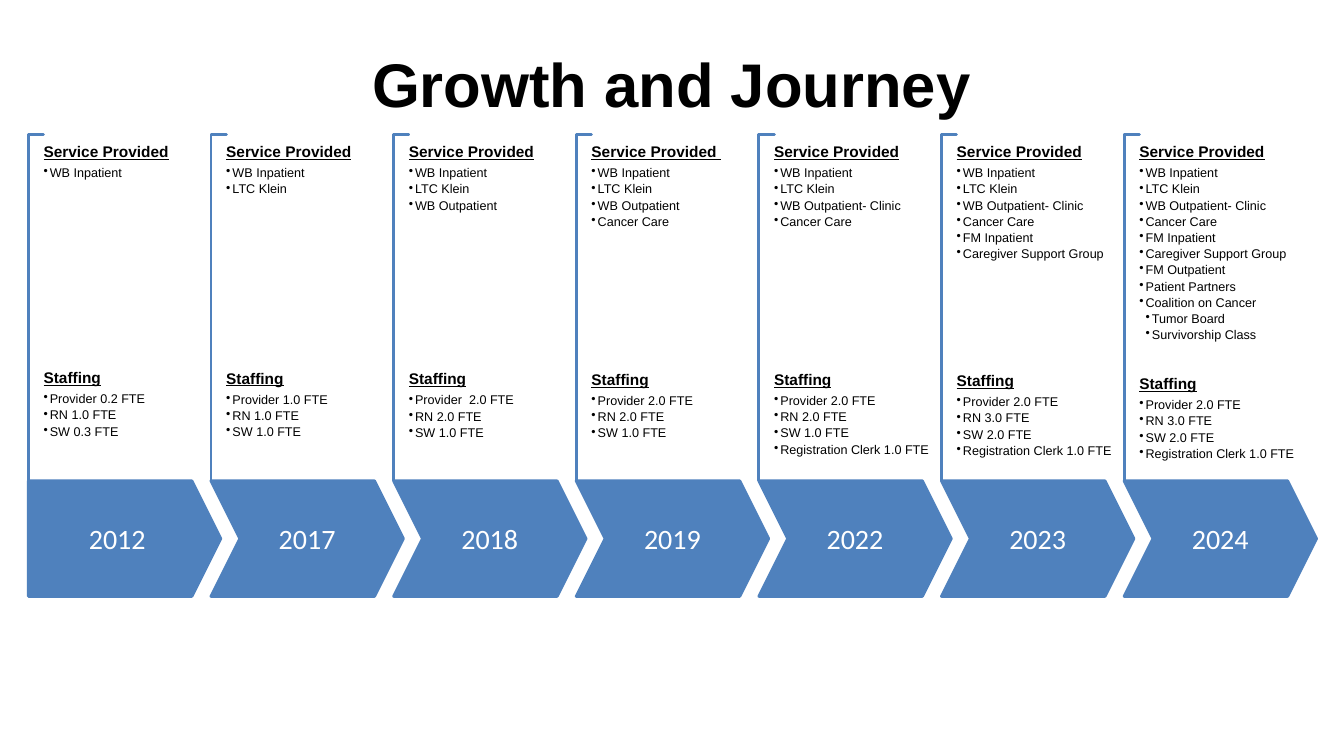
from dataclasses import dataclass
from lxml import etree
from pptx import Presentation
from pptx.dml.color import RGBColor
from pptx.enum.shapes import MSO_SHAPE
from pptx.enum.text import MSO_ANCHOR, PP_ALIGN
from pptx.oxml.ns import qn
from pptx.util import Pt

CORNER, CHEVRON, PENTAGON = MSO_SHAPE.CORNER, MSO_SHAPE.CHEVRON, MSO_SHAPE.PENTAGON
CENTER, MIDDLE, TOP = PP_ALIGN.CENTER, MSO_ANCHOR.MIDDLE, MSO_ANCHOR.TOP


@dataclass(frozen=True)
class Theme:
    blue: RGBColor = RGBColor(0x4F, 0x81, 0xBD)
    white: RGBColor = RGBColor(0xFF, 0xFF, 0xFF)
    black: RGBColor = RGBColor(0, 0, 0)
    text_font: str = "Arial"
    year_font: str = "Calibri"
    title: int = 44
    year: int = 20
    heading: int = 11
    item: int = 9


T = Theme()
LINE_SPACING = 0.9
HEADING_AFTER = 4.3
ITEM_AFTER = 1.82
ITEM_PITCH = 11.14  # one item line with the space after it
SERVICE_ROWS = 13   # item lines reserved above the staffing heading
INDENT = 4.5

# year, services, services one level down, staffing
YEARS = [
    ("2012", ["WB Inpatient"], [],
     ["Provider 0.2 FTE", "RN 1.0 FTE", "SW 0.3 FTE"]),
    ("2017", ["WB Inpatient", "LTC Klein"], [],
     ["Provider 1.0 FTE", "RN 1.0 FTE", "SW 1.0 FTE"]),
    ("2018", ["WB Inpatient", "LTC Klein", "WB Outpatient"], [],
     ["Provider  2.0 FTE", "RN 2.0 FTE", "SW 1.0 FTE"]),
    ("2019", ["WB Inpatient", "LTC Klein", "WB Outpatient", "Cancer Care"], [],
     ["Provider 2.0 FTE", "RN 2.0 FTE", "SW 1.0 FTE"]),
    ("2022", ["WB Inpatient", "LTC Klein", "WB Outpatient- Clinic", "Cancer Care"], [],
     ["Provider 2.0 FTE", "RN 2.0 FTE", "SW 1.0 FTE", "Registration Clerk 1.0 FTE"]),
    ("2023", ["WB Inpatient", "LTC Klein", "WB Outpatient- Clinic", "Cancer Care",
              "FM Inpatient", "Caregiver Support Group"], [],
     ["Provider 2.0 FTE", "RN 3.0 FTE", "SW 2.0 FTE", "Registration Clerk 1.0 FTE"]),
    ("2024", ["WB Inpatient", "LTC Klein", "WB Outpatient- Clinic", "Cancer Care",
              "FM Inpatient", "Caregiver Support Group", "FM Outpatient",
              "Patient Partners", "Coalition on Cancer"],
     ["Tumor Board", "Survivorship Class"],
     ["Provider 2.0 FTE", "RN 3.0 FTE", "SW 2.0 FTE", "Registration Clerk 1.0 FTE"]),
]


def add_run(p, text, size, color, font, bold=False, underline=False):
    r = p.add_run()
    r.text = text
    f = r.font
    f.size, f.name, f.bold, f.underline = Pt(size), font, bold, underline
    f.color.rgb = color


def add_shape(s, kind, x, y, w, h, fill):
    sp = s.shapes.add_shape(kind, Pt(x), Pt(y), Pt(w), Pt(h))
    sp.shadow.inherit = False
    sp.fill.solid()
    sp.fill.fore_color.rgb = fill
    sp.line.color.rgb = T.blue
    sp.line.width = Pt(2)
    return sp


def set_frame(tf, anchor):
    tf.word_wrap = True
    tf.vertical_anchor = anchor
    tf.margin_left = tf.margin_right = tf.margin_top = tf.margin_bottom = 0


def add_title(s, x, y, w, h, text):
    sp = s.shapes.add_textbox(Pt(x), Pt(y), Pt(w), Pt(h))
    set_frame(sp.text_frame, MIDDLE)
    p = sp.text_frame.paragraphs[0]
    p.alignment = CENTER
    add_run(p, text, T.title, T.black, T.text_font, bold=True)


def add_bracket(s, x, y, w, h):
    """Top-left corner line: an L shape turned by a quarter about its centre."""
    sp = add_shape(s, CORNER, x + (w - h) / 2, y + (h - w) / 2, h, w, T.white)
    sp.rotation = 90
    sp.adjustments[0] = sp.adjustments[1] = 0.01


def add_arrow(s, kind, x, y, w, h, year):
    sp = add_shape(s, kind, x, y, w, h, T.blue)
    sp.adjustments[0] = 0.25
    set_frame(sp.text_frame, MIDDLE)
    p = sp.text_frame.paragraphs[0]
    p.alignment = CENTER
    add_run(p, year, T.year, T.white, T.year_font)


def write_heading(p, text, before=0):
    p.line_spacing = LINE_SPACING
    p.space_before, p.space_after = Pt(before), Pt(HEADING_AFTER)
    add_run(p, text, T.heading, T.black, T.text_font, bold=True, underline=True)


def write_items(tf, items, level=1):
    for item in items:
        p = tf.add_paragraph()
        p.level = level
        p.line_spacing = LINE_SPACING
        p.space_before, p.space_after = Pt(0), Pt(ITEM_AFTER)
        pPr = p._p.get_or_add_pPr()
        pPr.set("marL", str(int(Pt(INDENT * level))))
        pPr.set("indent", str(-int(Pt(INDENT))))
        etree.SubElement(pPr, qn("a:buChar")).set("char", "•")
        add_run(p, item, T.item, T.black, T.text_font)


def add_details(s, x, y, w, h, heading, services, subservices, staffing):
    tf = s.shapes.add_textbox(Pt(x), Pt(y), Pt(w), Pt(h)).text_frame
    set_frame(tf, TOP)
    write_heading(tf.paragraphs[0], heading)
    write_items(tf, services)
    write_items(tf, subservices, level=2)
    free_rows = SERVICE_ROWS - len(services) - len(subservices)
    write_heading(tf.add_paragraph(), "Staffing", before=round(free_rows * ITEM_PITCH, 2))
    write_items(tf, staffing)


def add_timeline(s, x, y, pitch):
    for i, (year, services, subservices, staffing) in enumerate(YEARS):
        left = x + i * pitch
        # The 2019 heading ends in an underlined no-break space
        heading = "Service Provided" + (" " if year == "2019" else "")
        add_bracket(s, left, y, 11, 247)
        add_arrow(s, CHEVRON if i else PENTAGON, left, y + 247.5, 137.5, 82.5, year)
        add_details(s, left + 10.9, y + 7, 111.6, 225, heading,
                    services, subservices, staffing)


def main():
    prs = Presentation()
    prs.slide_width, prs.slide_height = Pt(960), Pt(540)
    s = prs.slides.add_slide(prs.slide_layouts[6])
    add_timeline(s, 20.2, 96, 130.45)
    add_title(s, 96.5, 14.4, 766.8, 90, "Growth and Journey")
    prs.save("out.pptx")


if __name__ == "__main__":
    main()
